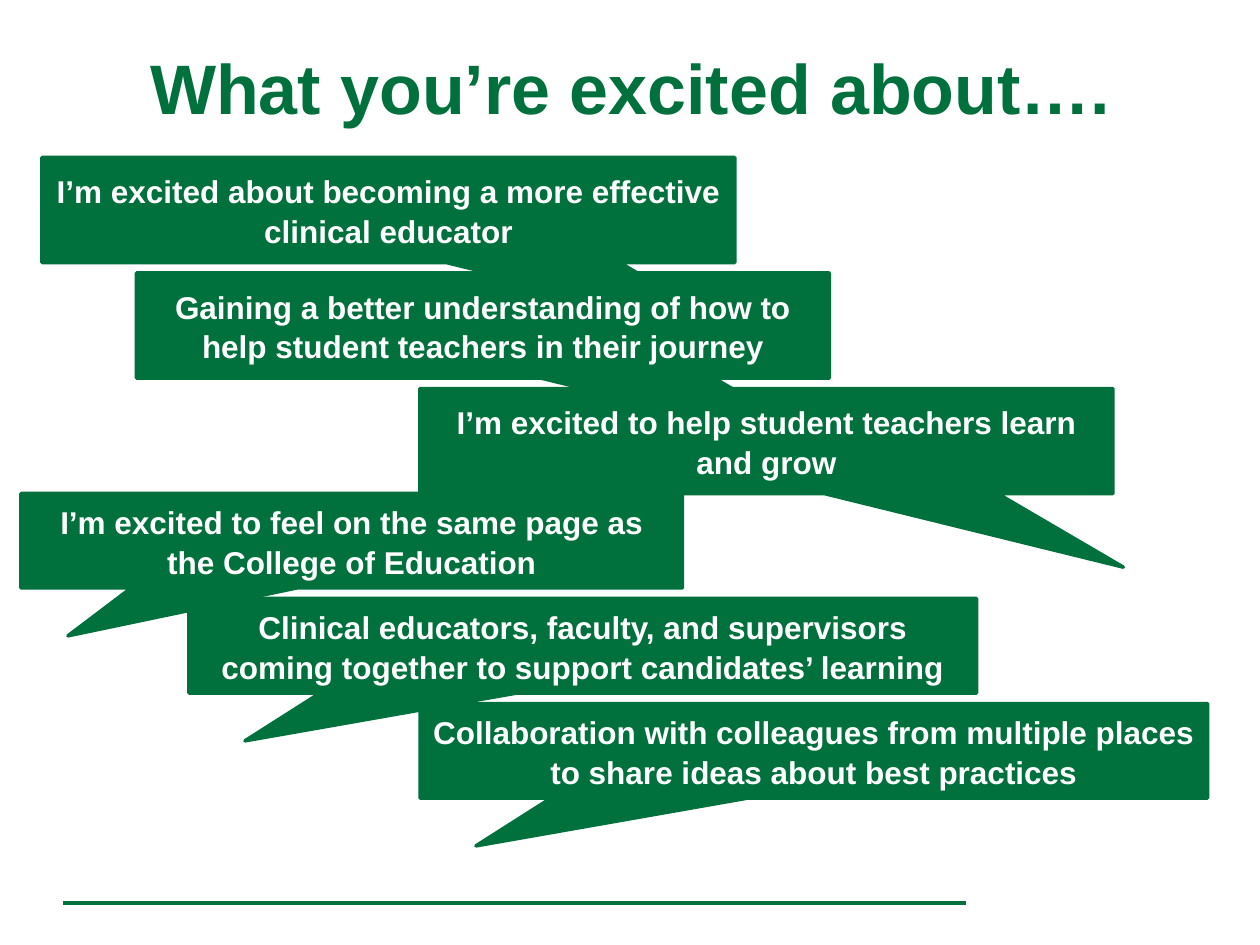
from lxml import etree
from pptx import Presentation
from pptx.dml.color import RGBColor
from pptx.enum import shapes, text
from pptx.oxml.ns import qn
from pptx.util import Pt

PX = 9525  # EMU per px, 96 px to the inch
GREEN, WHITE = "00703C", "FFFFFF"

# Callout sizes and the tail tip relative to the centre
WIDE_LEFT_TAIL = (600, 72, -0.429, 1.007)
NARROW_LEFT_TAIL = (504, 72, -0.429, 1.007)
RIGHT_TAIL = (528, 80, 0.515, 1.201)

# Left, top, style and wording, from back to front
QUOTES = [
    (16, 376, NARROW_LEFT_TAIL,
     "I’m excited to feel on the same page as the College of Education"),
    (32, 120, RIGHT_TAIL,
     "I’m excited about becoming a more effective clinical educator"),
    (144, 456, WIDE_LEFT_TAIL,
     "Clinical educators, faculty, and supervisors coming together to "
     "support candidates’ learning"),
    (104, 208, RIGHT_TAIL,
     "Gaining a better understanding of how to help student teachers "
     "in their journey"),
    (320, 536, WIDE_LEFT_TAIL,
     "Collaboration with colleagues from multiple places to share ideas "
     "about best practices"),
    (320, 296, RIGHT_TAIL,
     "I’m excited to help student teachers learn and grow"),
]


def color(hex_string):
    return RGBColor.from_string(hex_string)


def emu(*lengths):
    return [length * PX for length in lengths]


def write(frame, wording, size, hex_string, anchor):
    frame.text = wording
    frame.word_wrap = True
    frame.vertical_anchor = anchor
    paragraph = frame.paragraphs[0]
    paragraph.alignment = text.PP_ALIGN.CENTER
    font = paragraph.runs[0].font
    font.name, font.size, font.bold = "Arial", Pt(size), True
    font.color.rgb = color(hex_string)
    return paragraph


def add_heading(slide, left, top, width, height):
    title = slide.shapes.title
    title.left, title.top, title.width, title.height = emu(
        left, top, width, height)
    write(title.text_frame, "What you’re excited about….", 40, GREEN,
          text.MSO_ANCHOR.TOP)


def add_quote(slide, left, top, style, wording):
    width, height, tip_x, tip_y = style
    callout = slide.shapes.add_shape(
        shapes.MSO_SHAPE.RECTANGULAR_CALLOUT, *emu(left, top, width, height))
    callout.shadow.inherit = False
    callout.adjustments[0], callout.adjustments[1] = tip_x, tip_y
    callout.fill.solid()
    callout.fill.fore_color.rgb = color(GREEN)
    callout.line.color.rgb = color(GREEN)
    callout.line.width = Pt(2)
    paragraph = write(callout.text_frame, wording, 18, WHITE,
                      text.MSO_ANCHOR.MIDDLE)
    paragraph.line_spacing = 1.05


def add_footer_rule(slide, left, top, width):
    rule = slide.shapes.add_connector(
        shapes.MSO_CONNECTOR.STRAIGHT, *emu(left, top, left + width, top))
    rule.line.color.rgb = color(GREEN)
    rule.line.width = Pt(2.5)
    etree.SubElement(rule._element.spPr, qn("a:effectLst"))


def main():
    deck = Presentation()
    deck.slide_width, deck.slide_height = emu(960, 720)
    slide = deck.slides.add_slide(deck.slide_layouts[5])

    add_footer_rule(slide, 48, 688, 688)
    add_heading(slide, 0, 29, 960, 120)
    for quote in QUOTES:
        add_quote(slide, *quote)

    deck.save("out.pptx")


if __name__ == "__main__":
    main()
